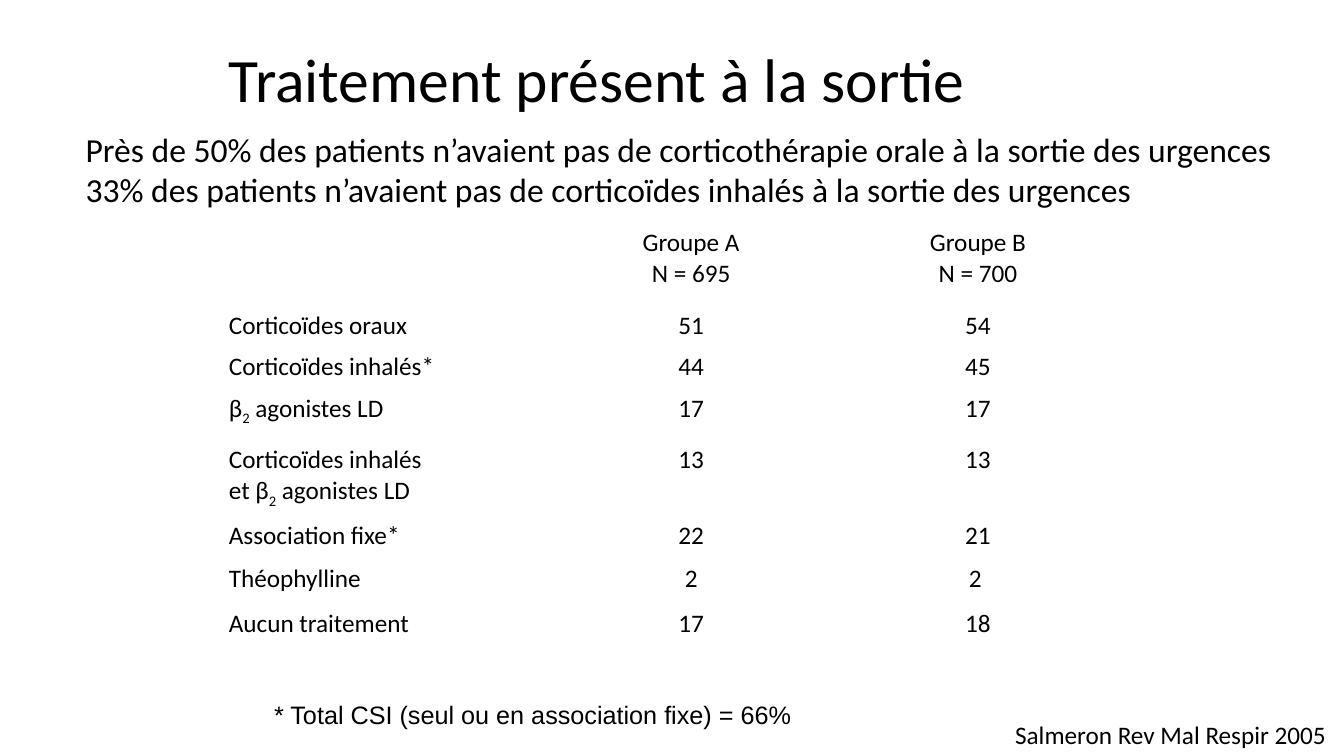
from typing import NamedTuple

from pptx import Presentation
from pptx.dml.color import RGBColor
from pptx.enum.text import MSO_ANCHOR, PP_ALIGN
from pptx.util import Inches, Pt

LEFT, CENTER = PP_ALIGN.LEFT, PP_ALIGN.CENTER
MIDDLE = MSO_ANCHOR.MIDDLE
COLORS = {"text": "000000"}
HANGING = Inches(0.38)


class Note(NamedTuple):
    left: float
    top: float
    width: float
    height: float
    text: str
    size: int = 18
    font: str = "Calibri"


class Row(NamedTuple):
    height: float
    label: str
    group_a: str
    group_b: str


NOTES = [
    Note(2.62, 6.89, 5.76, 0.4, "* Total CSI (seul ou en association fixe) = 66%", font="Arial"),
    Note(9.97, 7.09, 3.37, 0.4, "Salmeron Rev Mal Respir 2005"),
    Note(0.75, 1.23, 12.08, 0.91,
         "Près de 50% des patients n’avaient pas de corticothérapie orale à la sortie des urgences\n"
         "33% des patients n’avaient pas de corticoïdes inhalés à la sortie des urgences", 24),
]
COLUMN_WIDTHS = [3.31, 2.75, 2.94]
ROWS = [
    Row(0.82, "", "Groupe A\nN = 695", "Groupe B\nN = 700"),
    Row(0.4, "Corticoïdes oraux", "51", "54"),
    Row(0.42, "Corticoïdes inhalés*", "44", "45"),
    Row(0.51, "β~2~ agonistes LD", "17", "17"),
    Row(0.75, "Corticoïdes inhalés\net β~2~ agonistes LD", "13", "13"),
    Row(0.43, "Association fixe*", "22", "21"),
    Row(0.44, "Théophylline", "2", "2 "),
    Row(0.55, "Aucun traitement", "17", "18"),
]


def write(tf, text: str, size: int, font: str = "Calibri", align=LEFT) -> None:
    """Write one paragraph per line; text between tildes is set as subscript."""
    for i, line in enumerate(text.split("\n")):
        p = tf.add_paragraph() if i else tf.paragraphs[0]
        p.alignment = align
        p.font.size = Pt(size)
        p.font.name = font
        p.font.bold = False
        p.font.color.rgb = RGBColor.from_string(COLORS["text"])
        for j, part in enumerate(line.split("~")):
            r = p.add_run()
            r.text = part
            if j % 2:
                r.font._element.set("baseline", "-25000")


def add_title(s, text: str) -> None:
    title = s.shapes.title
    title.left, title.top = Inches(2.17), Inches(0.39)
    title.width, title.height = Inches(9), Inches(0.86)
    tf = title.text_frame
    tf.vertical_anchor = MIDDLE
    write(tf, text, 44)
    tf.paragraphs[0].line_spacing = 0.9


def add_note(s, note: Note) -> None:
    box = s.shapes.add_textbox(Inches(note.left), Inches(note.top),
                               Inches(note.width), Inches(note.height))
    tf = box.text_frame
    tf.word_wrap = True
    write(tf, note.text, note.size, note.font)


def add_treatment_table(s) -> None:
    frame = s.shapes.add_table(len(ROWS), len(COLUMN_WIDTHS), Inches(2.17), Inches(2.21),
                               Inches(sum(COLUMN_WIDTHS)), Inches(sum(r.height for r in ROWS)))
    table = frame.table
    table.first_row = table.horz_banding = False
    for column, width in zip(table.columns, COLUMN_WIDTHS):
        column.width = Inches(width)
    for i, row in enumerate(ROWS):
        table.rows[i].height = Inches(row.height)
        for j, text in enumerate((row.label, row.group_a, row.group_b)):
            cell = table.cell(i, j)
            cell.fill.background()
            write(cell.text_frame, text, 18, align=CENTER if j else LEFT)
            for p in cell.text_frame.paragraphs:
                pPr = p._p.get_or_add_pPr()
                pPr.set("marL", str(HANGING))
                pPr.set("indent", str(-HANGING))


def main() -> None:
    prs = Presentation()
    prs.slide_width, prs.slide_height = Inches(13.33), Inches(7.5)
    s = prs.slides.add_slide(prs.slide_layouts[5])
    add_title(s, "Traitement présent à la sortie")
    add_treatment_table(s)
    for note in NOTES:
        add_note(s, note)
    prs.save("out.pptx")


if __name__ == "__main__":
    main()
